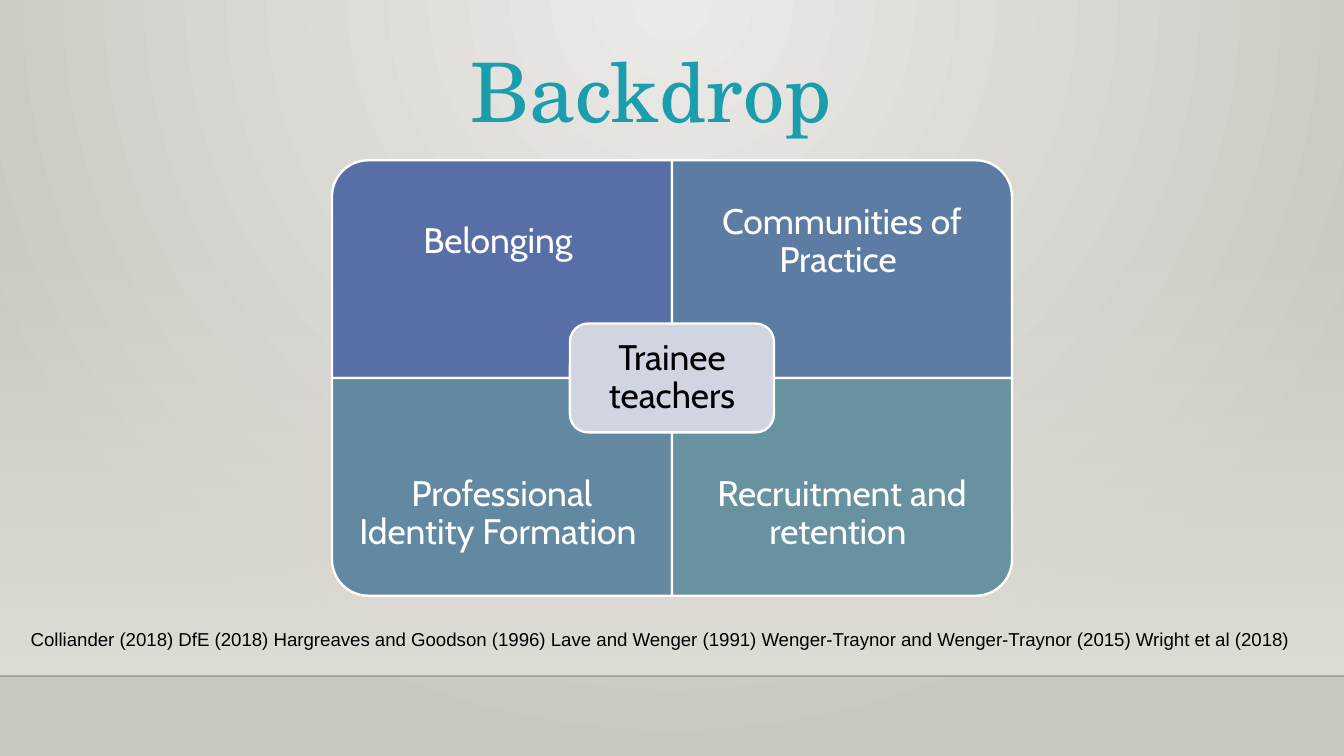
from lxml import etree
from pptx import Presentation
from pptx.dml.color import RGBColor
from pptx.enum.shapes import MSO_CONNECTOR, MSO_SHAPE as SHAPE
from pptx.enum.text import MSO_ANCHOR as ANCHOR, MSO_AUTO_SIZE as AUTO, PP_ALIGN as ALIGN
from pptx.oxml import parse_xml
from pptx.oxml.ns import nsdecls, qn
from pptx.util import Inches, Pt

W = 10
H = W * 9 / 16
WALL_TOP, FLOOR = 1.66, 5.03
CARD_W, CARD_H = 2.53, 1.62
GRID_X, GRID_Y = W / 2 - CARD_W, H / 2 - CARD_H
LABEL_H = 0.75 * CARD_H
HUB_W, HUB_H = 0.6 * CARD_W, 0.5 * CARD_H

WHITE = RGBColor(0xFF, 0xFF, 0xFF)
BLACK = RGBColor(0, 0, 0)
TEAL = RGBColor(0x1A, 0x9D, 0xAC)
HUB = RGBColor(0xD1, 0xD5, 0xE1)
BG_LIGHT = RGBColor(0xEC, 0xEA, 0xE7)
BG_DARK = RGBColor(0xCA, 0xC7, 0xC1)
WALL = RGBColor(0xDF, 0xDB, 0xD5)

# text, fill, column, row, rotation that turns the round corner outwards
CARDS = [
    ("Belonging ", RGBColor(0x58, 0x6E, 0xA6), 0, 0, 270),
    ("Communities of Practice ", RGBColor(0x5D, 0x7C, 0xA4), 1, 0, 0),
    ("Professional Identity Formation ", RGBColor(0x63, 0x88, 0xA2), 0, 1, 180),
    ("Recruitment and retention ", RGBColor(0x68, 0x92, 0xA0), 1, 1, 90),
]
SOURCES = ("Colliander (2018) DfE (2018) Hargreaves and Goodson (1996) "
           "Lave and Wenger (1991) Wenger-Traynor and Wenger-Traynor (2015) "
           "Wright et al (2018)")


def set_gradient(fill, stops, direction):
    """Fill with (position, colour, alpha) stops in percent; direction is XML."""
    fill.gradient()
    grad = fill._fill._gradFill
    for child in list(grad):
        grad.remove(child)
    gs = "".join(
        f'<a:gs pos="{pos * 1000}"><a:srgbClr val="{color}">'
        f'<a:alpha val="{alpha * 1000}"/></a:srgbClr></a:gs>'
        for pos, color, alpha in stops)
    new = parse_xml(f'<a:gradFill {nsdecls("a")}><a:gsLst>{gs}</a:gsLst>'
                    f'{direction}</a:gradFill>')
    for child in list(new):
        grad.append(child)


def add_backdrop(s):
    set_gradient(s.background.fill, [(0, BG_LIGHT, 100), (100, BG_DARK, 100)],
                 '<a:path path="circle">'
                 '<a:fillToRect l="43000" t="0" r="43000" b="100000"/></a:path>')
    wall = s.shapes.add_shape(SHAPE.RECTANGLE, 0, Inches(WALL_TOP),
                              Inches(W), Inches(FLOOR - WALL_TOP))
    wall.shadow.inherit = False
    wall.line.fill.background()
    set_gradient(wall.fill, [(0, WALL, 0), (100, WALL, 100)],
                 '<a:lin ang="5400000" scaled="0"/>')
    edge = s.shapes.add_connector(MSO_CONNECTOR.STRAIGHT, 0, Inches(FLOOR),
                                  Inches(W), Inches(FLOOR))
    edge.line.color.rgb = BLACK
    edge.line.width = Pt(1)
    sp_pr = edge._element.spPr
    color = sp_pr.find(".//" + qn("a:srgbClr"))
    etree.SubElement(color, qn("a:alpha")).set("val", "20000")
    etree.SubElement(sp_pr, qn("a:effectLst"))


def add_text(s, text, x, y, w, h, font, size, color, inset=(0, 0),
             align=ALIGN.CENTER, anchor=ANCHOR.TOP, spacing=None):
    """Add a one-paragraph text box; inset is (sides, top and bottom)."""
    tf = s.shapes.add_textbox(Inches(x), Inches(y), Inches(w), Inches(h)).text_frame
    tf.word_wrap = True
    tf.vertical_anchor = anchor
    tf.margin_left = tf.margin_right = Inches(inset[0])
    tf.margin_top = tf.margin_bottom = Inches(inset[1])
    p = tf.paragraphs[0]
    p.text = text
    p.alignment = align
    p.line_spacing = spacing
    f = p.runs[0].font
    f.name, f.size, f.color.rgb = font, Pt(size), color
    return tf


def add_label(s, text, x, y, w, h, color, inset):
    add_text(s, text, x, y, w, h, "Cabin", 19, color, (inset, inset),
             anchor=ANCHOR.MIDDLE, spacing=0.9)


def add_panel(s, kind, x, y, w, h, color, rotation=0):
    """Add a white-edged panel that covers the given box once rotated."""
    pw, ph = (h, w) if rotation % 180 else (w, h)
    sp = s.shapes.add_shape(kind, Inches(x + (w - pw) / 2), Inches(y + (h - ph) / 2),
                            Inches(pw), Inches(ph))
    sp.rotation = rotation
    sp.shadow.inherit = False
    sp.fill.solid()
    sp.fill.fore_color.rgb = color
    sp.line.color.rgb = WHITE
    sp.line.width = Pt(1.25)


def add_card(s, text, color, col, row, rotation):
    x, y = GRID_X + col * CARD_W, GRID_Y + row * CARD_H
    add_panel(s, SHAPE.ROUND_1_RECTANGLE, x, y, CARD_W, CARD_H, color, rotation)
    label_y = y + row * (CARD_H - LABEL_H)
    add_label(s, text, x, label_y, CARD_W, LABEL_H, WHITE, 0.15)


def add_hub(s, text):
    x, y = (W - HUB_W) / 2, (H - HUB_H) / 2
    add_panel(s, SHAPE.ROUNDED_RECTANGLE, x, y, HUB_W, HUB_H, HUB)
    pad = 0.04
    add_label(s, text, x + pad, y + pad, HUB_W - 2 * pad, HUB_H - 2 * pad, BLACK, 0.08)


def add_sources(s):
    tf = add_text(s, SOURCES, 0.13, 4.62, 9.73, 0.27, "Arial", 10, BLACK,
                  (0.1, 0.05), ALIGN.LEFT)
    tf.word_wrap = False
    tf.auto_size = AUTO.SHAPE_TO_FIT_TEXT


def main():
    prs = Presentation()
    prs.slide_width, prs.slide_height = Inches(W), Inches(H)
    s = prs.slides.add_slide(prs.slide_layouts[6])
    add_backdrop(s)
    add_text(s, "Backdrop", 0.28, 0.37, 9.13, 0.94, "TeX Gyre Schola", 44, TEAL,
             spacing=Pt(48))
    for card in CARDS:
        add_card(s, *card)
    add_hub(s, "Trainee teachers")
    add_sources(s)
    prs.save("out.pptx")


if __name__ == "__main__":
    main()
